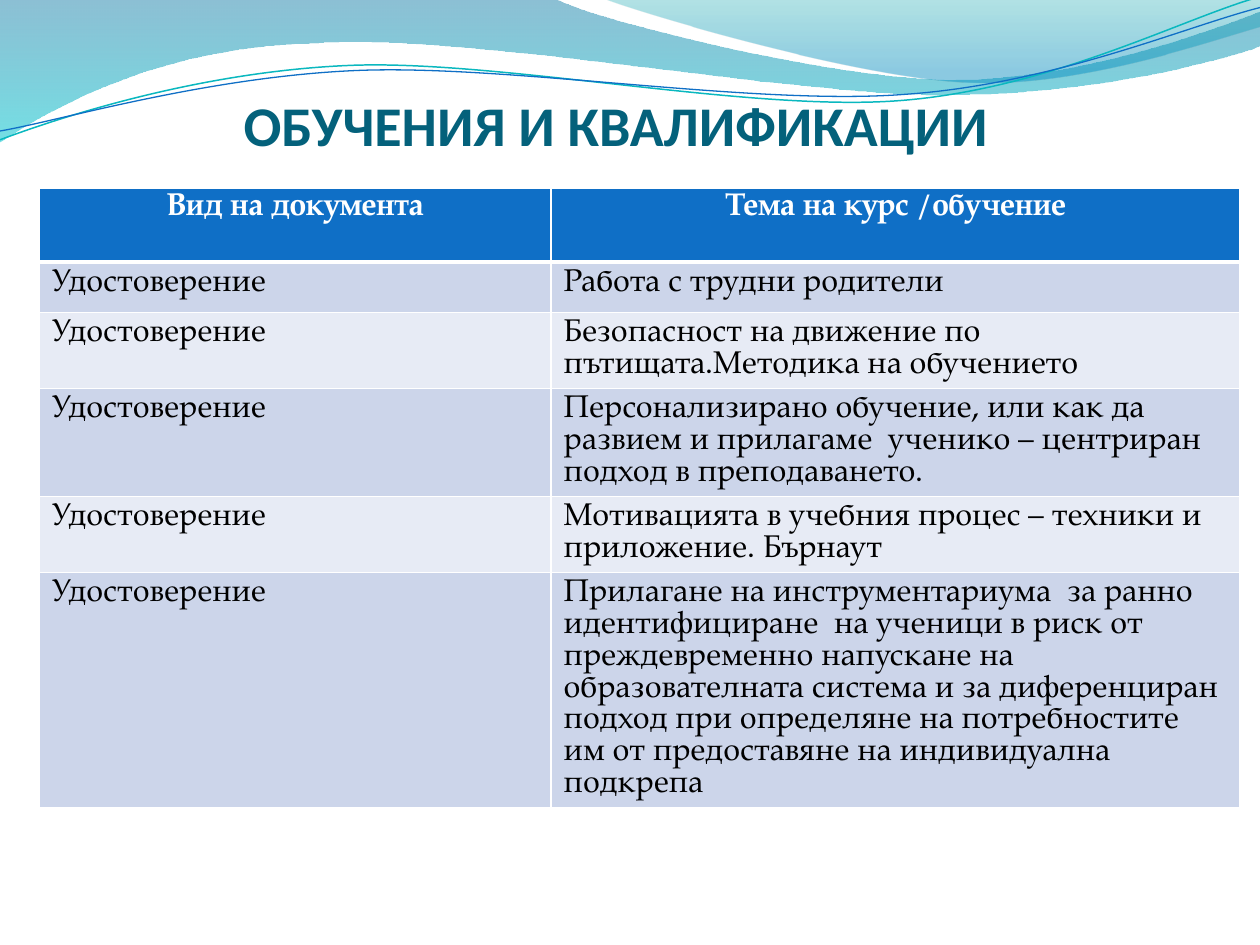
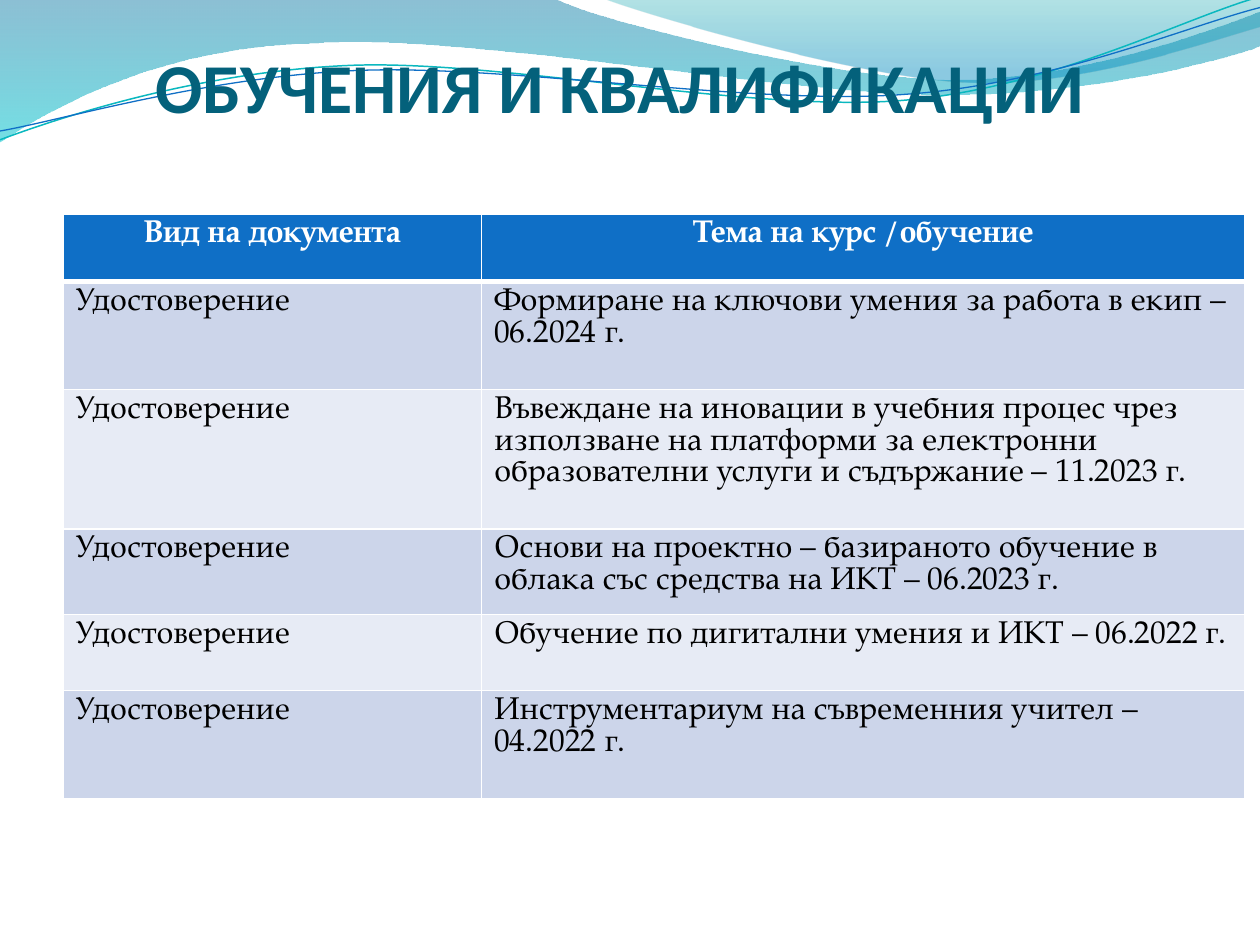
from lxml import etree
from pptx import Presentation
from pptx import util as u
from pptx.dml import color
from pptx.enum import text
from pptx.oxml import ns

COLORS = dict(title="04617B", header="0F6FC6", odd="CCD5EA", even="E7EBF5",
              white="FFFFFF", black="000000", teal="0AB8BF")
TITLE = "ОБУЧЕНИЯ И КВАЛИФИКАЦИИ"
HEADINGS = ("Вид на документа", "Тема на курс /обучение")
DOCUMENT = "Удостоверение"
BODY_FONT = dict(name="TeX Gyre Pagella", size=u.Pt(18))
HEADER_SPACING, BODY_SPACING = u.Pt(17), u.Pt(18.1)

WAVES = [
    dict(start=(0, 0),
         segments=[(4.4, -0.01),
                   (4.76, 0.17, 6.64, 0.63, 7.58, 0.63),
                   (8.53, 0.63, 9.58, 0.26, 10, 0.09),
                   (10.01, 0.36),
                   (9.83, 0.44, 8.7, 0.76, 7.46, 0.75),
                   (6.22, 0.75, 3.82, 0.28, 2.57, 0.34),
                   (1.29, 0.36, 0.46, 0.83, -0.01, 1.13),
                   (0, 0)],
         stops=[(0, "0074A1", 45), (1, "00C6CF", 55)]),
    dict(start=(4.79, -0.01),
         segments=[(5.09, 0.11, 6.82, 0.62, 7.69, 0.65),
                   (8.56, 0.69, 9.61, 0.32, 10, 0.21),
                   (10, 0),
                   (4.79, -0.01)],
         stops=[(0, "00A1A9", 30), (0.8, "008BBF", 45)]),
]
STRANDS = [
    dict(start=(0, 1.11),
         segments=[(0.48, 0.93, 1.58, 0.57, 2.77, 0.52),
                   (3.95, 0.47, 5.93, 0.89, 7.13, 0.8),
                   (8.33, 0.71, 9.38, 0.15, 9.98, -0.02)],
         line=(COLORS["teal"], 0.85)),
    dict(start=(0, 1.04),
         segments=[(0.47, 0.96, 1.64, 0.61, 2.83, 0.56),
                   (4.03, 0.51, 5.97, 0.84, 7.17, 0.75),
                   (8.36, 0.67, 9.41, 0.21, 10, 0.06)],
         line=(COLORS["header"], 0.75)),
]

SLIDES = [
    dict(title_box=(0.99, 0, 22.86, 3.18), title_size=32,
         table_at=(0.79, 3.79), columns=(10.32, 13.89),
         rows=(1.49, 1.02, 1.53, 2.18, 1.53, 4.72),
         topics=(
             "Работа с трудни родители",
             "Безопасност на движение по пътищата.Методика на обучението",
             "Персонализирано обучение, или как да развием и прилагаме  ученико – "
             "центриран подход в преподаването.",
             "Мотивацията в учебния процес – техники и приложение. Бърнаут",
             "Прилагане на инструментариума  за ранно идентифициране  на ученици в "
             "риск от преждевременно напускане на образователната система и за "
             "диференциран  подход при определяне на потребностите им от "
             "предоставяне на индивидуална подкрепа")),
    dict(title_box=(1.07, 0, 22.86, 2.57), title_size=40,
         table_at=(1.27, 4.32), columns=(8.44, 15.38),
         rows=(1.35, 2.18, 2.81, 1.73, 1.53, 2.18),
         topics=(
             "Формиране на ключови умения за работа в екип – 06.2024 г.",
             "Въвеждане на иновации в учебния процес чрез използване на платформи "
             "за електронни образователни услуги и съдържание – 11.2023 г.",
             "Основи на проектно – базираното обучение в облака със средства на "
             "ИКТ – 06.2023 г.",
             "Обучение по дигитални умения и ИКТ – 06.2022 г.",
             "Инструментариум на съвременния учител – 04.2022 г.")),
]


def rgb(value):
    return color.RGBColor.from_string(value)


def apply(target, values):
    for name, value in values.items():
        setattr(target, name, value)


def write(tf, content, font, font_color, align, spacing=None):
    p = tf.paragraphs[0]
    apply(p, dict(alignment=align, line_spacing=spacing))
    r = p.add_run()
    r.text = content
    apply(r.font, font)
    r.font.color.rgb = rgb(font_color)


def bend(sp, segments):
    lines = iter(list(sp.element.iter(ns.qn("a:lnTo"))))
    for segment in segments:
        first = next(lines)
        if len(segment) == 6:
            first.tag = ns.qn("a:cubicBezTo")
            for line in (next(lines), next(lines)):
                first.append(line[0])
                line.getparent().remove(line)


def add_outline(s, box, start, segments, closed):
    left, top, width = box
    scale = width / 10
    pairs = [start] + [segment[i:i + 2] for segment in segments
                       for i in range(0, len(segment), 2)]
    points = [(left + x * scale, top + y * scale) for x, y in pairs]
    builder = s.shapes.build_freeform(*points[0])
    builder.add_line_segments(points[1:], close=closed)
    sp = builder.convert_to_shape()
    sp.shadow.inherit = False
    bend(sp, segments)
    return sp


def add_waves(s, box):
    for wave in WAVES:
        sp = add_outline(s, box, wave["start"], wave["segments"], True)
        sp.line.fill.background()
        sp.fill.gradient()
        sp.fill.gradient_angle = 270
        for stop, (position, value, _) in zip(sp.fill.gradient_stops, wave["stops"]):
            stop.position = position
            stop.color.rgb = rgb(value)
        values = sp.element.iter(ns.qn("a:srgbClr"))
        for element, (_, _, alpha) in zip(values, wave["stops"]):
            etree.SubElement(element, ns.qn("a:alpha"), val=str(alpha * 1000))
    for strand in STRANDS:
        sp = add_outline(s, box, strand["start"], strand["segments"], False)
        sp.fill.background()
        value, width = strand["line"]
        sp.line.color.rgb = rgb(value)
        sp.line.width = u.Pt(width)


def add_title(s, box, size):
    tf = s.shapes.add_textbox(*map(u.Cm, box)).text_frame
    apply(tf, dict(word_wrap=True, vertical_anchor=text.MSO_ANCHOR.BOTTOM,
                   margin_left=0, margin_right=0, margin_top=u.Cm(0.13), margin_bottom=0))
    write(tf, TITLE, dict(name="Calibri", size=u.Pt(size), bold=True),
          COLORS["title"], text.PP_ALIGN.CENTER)


def add_borders(cell, widths):
    tc_pr = cell._tc.get_or_add_tcPr()
    for side, width in widths.items():
        ln = etree.SubElement(tc_pr, ns.qn("a:ln" + side), w=str(u.Pt(width)))
        fill = etree.SubElement(ln, ns.qn("a:solidFill"))
        etree.SubElement(fill, ns.qn("a:srgbClr"), val=COLORS["white"])


def add_courses(s, at, columns, rows, topics):
    left, top = map(u.Cm, at)
    table = s.shapes.add_table(len(rows), len(columns), left, top,
                               u.Cm(sum(columns)), u.Cm(sum(rows))).table
    for column, width in zip(table.columns, columns):
        column.width = u.Cm(width)
    content = [HEADINGS] + [(DOCUMENT, topic) for topic in topics]
    for i, (height, entries) in enumerate(zip(rows, content)):
        table.rows[i].height = u.Cm(height)
        header = i == 0
        fill = "header" if header else "odd" if i % 2 else "even"
        for cell, entry in zip(table.rows[i].cells, entries):
            add_borders(cell, dict(L=1, R=1, T=3 if i == 1 else 1, B=3 if header else 1))
            cell.fill.solid()
            cell.fill.fore_color.rgb = rgb(COLORS[fill])
            write(cell.text_frame, entry, dict(BODY_FONT, bold=header),
                  COLORS["white" if header else "black"],
                  text.PP_ALIGN.CENTER if header else text.PP_ALIGN.LEFT,
                  HEADER_SPACING if header else BODY_SPACING)


def add_course_slide(prs, content):
    s = prs.slides.add_slide(prs.slide_layouts[6])
    add_waves(s, (0, 0, prs.slide_width))
    add_title(s, content["title_box"], content["title_size"])
    add_courses(s, content["table_at"], content["columns"],
                content["rows"], content["topics"])


def main():
    prs = Presentation()
    apply(prs, dict(slide_width=u.Cm(25.4), slide_height=u.Cm(19.05)))
    for content in SLIDES:
        add_course_slide(prs, content)
    prs.save("out.pptx")


if __name__ == "__main__":
    main()
